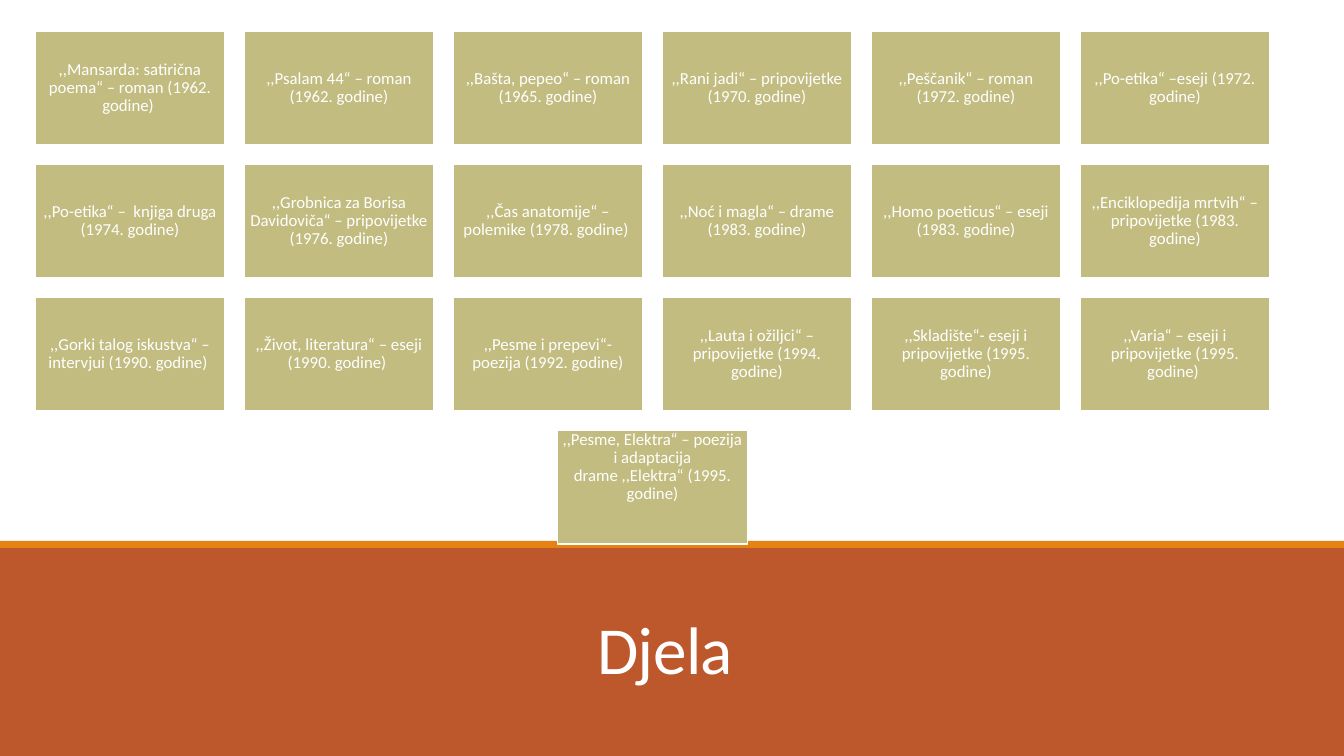
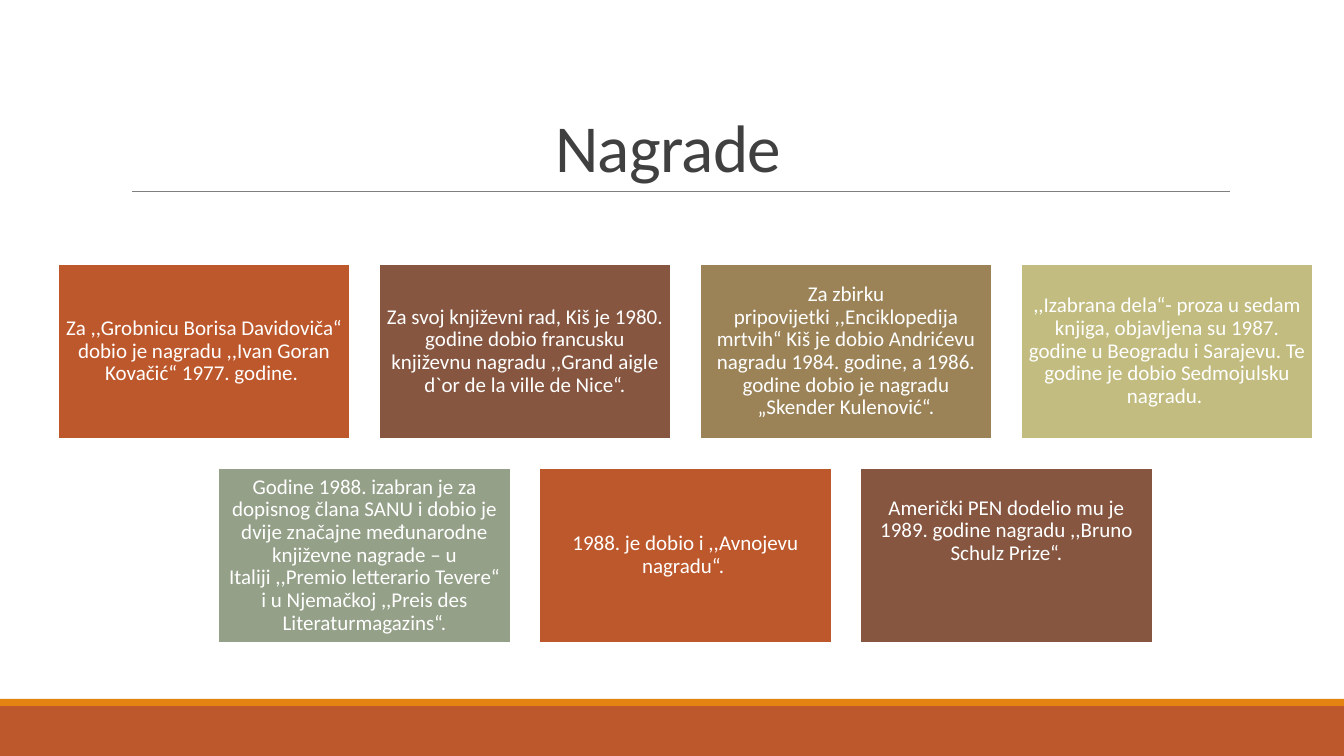
from lxml import etree
from pptx import Presentation
from pptx import util as u
from pptx.dml import color
from pptx.enum import shapes, text
from pptx.oxml import ns

SCALE = 914400 / 100.8
WIDTH, HEIGHT = 1344, 756
FONT = "Calibri"
TITLE_ONLY = 5
COLOURS = {
    "white": "FFFFFF",
    "ink": "404040",
    "rule": "808080",
    "orange": "E48312",
    "rust": "BD582C",
    "brown": "865640",
    "khaki": "9B8357",
    "sand": "C2BC80",
    "sage": "94A088",
}

WORK_ROWS = [
    [
        ",,Mansarda: satirična poema“ – roman (1962. godine) ",
        ",,Psalam 44“ – roman (1962. godine)",
        ",,Bašta, pepeo“ – roman (1965. godine)",
        ",,Rani jadi“ – pripovijetke (1970. godine)",
        ",,Peščanik“ – roman (1972. godine)",
        ",,Po-etika“ –eseji (1972. godine)",
    ],
    [
        ",,Po-etika“ –  knjiga druga (1974. godine)",
        ",,Grobnica za Borisa Davidoviča“ – pripovijetke (1976. godine)",
        ",,Čas anatomije“ – polemike (1978. godine) ",
        ",,Noć i magla“ – drame (1983. godine)",
        ",,Homo poeticus“ – eseji (1983. godine)",
        ",,Enciklopedija mrtvih“ – pripovijetke (1983. godine)",
    ],
    [
        ",,Gorki talog iskustva“ – intervjui (1990. godine) ",
        ",,Život, literatura“ – eseji (1990. godine) ",
        ",,Pesme i prepevi“- poezija (1992. godine)",
        ",,Lauta i ožiljci“ – pripovijetke (1994. godine)",
        ",,Skladište“- eseji i pripovijetke (1995. godine)",
        ",,Varia“ – eseji i pripovijetke (1995. godine) ",
    ],
    [",,Pesme, Elektra“ – poezija i adaptacija drame ,,Elektra“ (1995. godine)"],
]

AWARD_ROWS = [
    [
        "Za ,,Grobnicu Borisa Davidoviča“ dobio je nagradu ,,Ivan Goran Kovačić“ "
        "1977. godine. ",
        "Za svoj književni rad, Kiš je 1980. godine dobio francusku književnu "
        "nagradu ,,Grand aigle d`or de la ville de Nice“.",
        "Za zbirku pripovijetki ,,Enciklopedija mrtvih“ Kiš je dobio Andrićevu "
        "nagradu 1984. godine, a 1986. godine dobio je nagradu „Skender Kulenović“.",
        ",,Izabrana dela“- proza u sedam knjiga, objavljena su 1987. godine u "
        "Beogradu i Sarajevu. Te godine je dobio Sedmojulsku nagradu. ",
    ],
    [
        "Godine 1988. izabran je za dopisnog člana SANU i dobio je dvije značajne "
        "međunarodne književne nagrade – u Italiji ,,Premio letterario Tevere“ i u "
        "Njemačkoj ,,Preis des Literaturmagazins“.",
        "1988. je dobio i ,,Avnojevu nagradu“. ",
        "Američki PEN dodelio mu je 1989. godine nagradu ,,Bruno Schulz Prize“.",
    ],
]
AWARD_FILLS = ["rust", "brown", "khaki", "sand", "sage"]


def px(length):
    """Turn px into EMU."""
    return u.Emu(round(length * SCALE))


def rgb(name):
    """Look up a named colour."""
    return color.RGBColor.from_string(COLOURS[name])


def write(shape, words, *, size, colour="white", spacing=0.9, margins=(5, 5),
          anchor=text.MSO_ANCHOR.MIDDLE, tracking=None):
    """Fill a shape with one centred, formatted paragraph."""
    frame = shape.text_frame
    frame.word_wrap = True
    frame.auto_size = text.MSO_AUTO_SIZE.NONE
    frame.vertical_anchor = anchor
    side, edge = margins
    frame.margin_left = frame.margin_right = px(side)
    frame.margin_top = frame.margin_bottom = px(edge)
    para = frame.paragraphs[0]
    para.alignment = text.PP_ALIGN.CENTER
    para.line_spacing = spacing
    span = para.add_run()
    span.text = words
    span.font.name = FONT
    span.font.size = u.Pt(size)
    span.font.color.rgb = rgb(colour)
    if tracking is not None:
        span.font._element.set("spc", str(round(tracking * 100)))


def add_box(page, left, top, width, height, fill, outlined=False):
    """Draw a filled rectangle, with a white outline on request."""
    box = page.shapes.add_shape(shapes.MSO_SHAPE.RECTANGLE,
                                px(left), px(top), px(width), px(height))
    box.shadow.inherit = False
    box.fill.solid()
    box.fill.fore_color.rgb = rgb(fill)
    if outlined:
        box.line.color.rgb = rgb("white")
        box.line.width = u.Pt(1.25)
    else:
        box.line.fill.background()
    return box


def add_band(page, top):
    """Draw the orange strip and the rust band down to the slide's foot."""
    strip = 7
    add_box(page, 0, top + strip, WIDTH, HEIGHT - top - strip, "rust")
    add_box(page, 0, top, WIDTH, strip, "orange")


def add_rule(page, left, right, top):
    """Draw the thin line under a title."""
    rule = page.shapes.add_connector(shapes.MSO_CONNECTOR.STRAIGHT,
                                     px(left), px(top), px(right), px(top))
    rule.line.color.rgb = rgb("rule")
    rule.line.width = u.Pt(0.5)
    etree.SubElement(rule.element.spPr, ns.qn("a:effectLst"))


def add_page(deck, title, *, band_top, left, top, height, colour):
    """Add a slide with its band and its title in front of it."""
    page = deck.slides.add_slide(deck.slide_layouts[TITLE_ONLY])
    add_band(page, band_top)
    heading = page.shapes.title
    page.shapes.element.append(heading.element)
    heading.left, heading.top = px(left), px(top)
    heading.width, heading.height = px(1109), px(height)
    write(heading, title, size=48, colour=colour, spacing=0.85, margins=(9, 5),
          anchor=text.MSO_ANCHOR.BOTTOM, tracking=-0.5)
    return page


def add_cards(page, rows, *, left, top, width, height, gap, fills, size, margin,
              last_edge):
    """Lay out rows of cards, each centred on the first; the last hangs from its top."""
    pitch = width + gap
    index = 0
    for row_number, row in enumerate(rows):
        indent = (len(rows[0]) - len(row)) * pitch / 2
        for column, words in enumerate(row):
            card = add_box(page, left + indent + column * pitch,
                           top + row_number * (height + gap), width, height,
                           fills[index % len(fills)], outlined=True)
            is_last = words is rows[-1][-1]
            write(card, words, size=size,
                  margins=(margin, last_edge if is_last else margin),
                  anchor=text.MSO_ANCHOR.TOP if is_last else text.MSO_ANCHOR.MIDDLE)
            index += 1


def add_works(deck):
    """Build the slide of works."""
    page = add_page(deck, "Djela ", band_top=541, left=118, top=579, height=114,
                    colour="white")
    add_cards(page, WORK_ROWS, left=35, top=31, width=190, height=114, gap=19,
              fills=["sand"], size=12, margin=5, last_edge=1)


def add_awards(deck):
    """Build the slide of awards."""
    page = add_page(deck, "Nagrade ", band_top=699, left=121, top=31, height=160,
                    colour="ink")
    add_rule(page, 132, 1230, 191)
    add_cards(page, AWARD_ROWS, left=58, top=264, width=292, height=175, gap=29,
              fills=AWARD_FILLS, size=15, margin=6, last_edge=29)


def main():
    """Build and save the deck."""
    deck = Presentation()
    deck.slide_width, deck.slide_height = px(WIDTH), px(HEIGHT)
    add_works(deck)
    add_awards(deck)
    deck.save("out.pptx")


if __name__ == "__main__":
    main()
